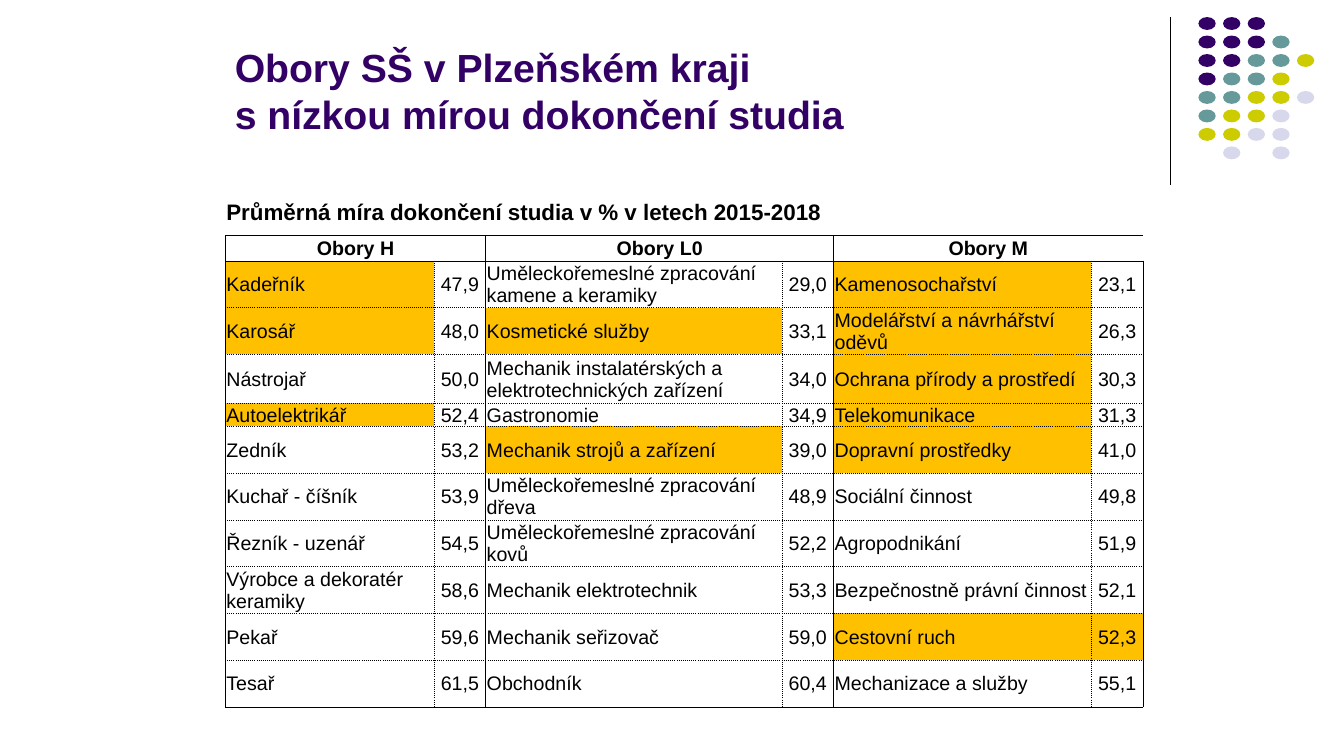
from lxml import etree
from pptx import Presentation
from pptx.dml.color import RGBColor
from pptx.enum.shapes import MSO_CONNECTOR, MSO_SHAPE
from pptx.enum.text import MSO_ANCHOR, MSO_AUTO_SIZE, PP_ALIGN
from pptx.oxml.ns import qn
from pptx.util import Pt

LEFT, CENTER = PP_ALIGN.LEFT, PP_ALIGN.CENTER
MIDDLE, BOTTOM = MSO_ANCHOR.MIDDLE, MSO_ANCHOR.BOTTOM
ELLIPSE, STRAIGHT = MSO_SHAPE.OVAL, MSO_CONNECTOR.STRAIGHT
NO_AUTOFIT = MSO_AUTO_SIZE.NONE

FONT = "Arial"
COLORS = {
    "black": "000000",
    "purple": "330066",
    "teal": "669999",
    "lime": "CCCC00",
    "lavender": "D8D8EC",
    "highlight": "FFC000",
}

# One letter per dot: the initial of its colour; a space leaves the place empty
DOT_ROWS = ["ppp", "pppt", "ppttl", "pttl", "ttllv", "tllv", "llvv", " v v"]
DOT_COLORS = {"p": "purple", "t": "teal", "l": "lime", "v": "lavender"}

CAPTION = "Průměrná míra dokončení studia v % v letech 2015-2018"
GROUPS = ["Obory H", "Obory L0", "Obory M"]
FIELDS = [
    ("Kadeřník", "47,9", "Uměleckořemeslné zpracování kamene a keramiky", "29,0",
     "Kamenosochařství", "23,1"),
    ("Karosář", "48,0", "Kosmetické služby", "33,1",
     "Modelářství a návrhářství oděvů", "26,3"),
    ("Nástrojař", "50,0", "Mechanik instalatérských a elektrotechnických zařízení", "34,0",
     "Ochrana přírody a prostředí", "30,3"),
    ("Autoelektrikář", "52,4", "Gastronomie", "34,9", "Telekomunikace", "31,3"),
    ("Zedník", "53,2", "Mechanik strojů a zařízení", "39,0", "Dopravní prostředky", "41,0"),
    ("Kuchař - číšník", "53,9", "Uměleckořemeslné zpracování dřeva", "48,9",
     "Sociální činnost", "49,8"),
    ("Řezník - uzenář", "54,5", "Uměleckořemeslné zpracování kovů", "52,2",
     "Agropodnikání", "51,9"),
    ("Výrobce a dekoratér keramiky", "58,6", "Mechanik elektrotechnik", "53,3",
     "Bezpečnostně právní činnost", "52,1"),
    ("Pekař", "59,6", "Mechanik seřizovač", "59,0", "Cestovní ruch", "52,3"),
    ("Tesař", "61,5", "Obchodník", "60,4", "Mechanizace a služby", "55,1"),
]
HIGHLIGHTED = {
    "Kadeřník", "Karosář", "Autoelektrikář", "Kosmetické služby",
    "Mechanik strojů a zařízení", "Kamenosochařství", "Modelářství a návrhářství oděvů",
    "Ochrana přírody a prostředí", "Telekomunikace", "Dopravní prostředky",
    "Cestovní ruch", "52,3",
}

COLUMN_WIDTHS = [149, 37, 211.5, 37, 184, 37]
ROW_HEIGHT = 33.4
SPECIAL_HEIGHTS = {1: 18, 4: 35, 5: 14}


def color(name):
    return RGBColor.from_string(COLORS[name])


def write_text(frame, text, *, size, bold=False, tint="black", align=LEFT):
    para = frame.paragraphs[0]
    para.text = text
    para.alignment = align
    for span in para.runs:
        span.font.name = FONT
        span.font.size = Pt(size)
        span.font.bold = bold
        span.font.color.rgb = color(tint)


def add_title(page, text):
    title = page.shapes.title
    title.left, title.top, title.width, title.height = Pt(160.5), Pt(0), Pt(594), Pt(102)
    frame = title.text_frame
    frame.auto_size = NO_AUTOFIT
    frame.vertical_anchor = BOTTOM
    write_text(frame, text, size=28, bold=True, tint="purple")


def add_divider(page):
    line = page.shapes.add_connector(STRAIGHT, Pt(836), Pt(12), Pt(836), Pt(132))
    line.line.color.rgb = color("black")
    line.line.width = Pt(0.75)
    etree.SubElement(line.element.spPr, qn("a:effectLst"))


def add_dots(page):
    for row, letters in enumerate(DOT_ROWS):
        for column, letter in enumerate(letters):
            if letter == " ":
                continue
            dot = page.shapes.add_shape(
                ELLIPSE, Pt(856 + 17.6 * column), Pt(12.2 + 13.2 * row), Pt(12.4), Pt(9.2))
            dot.shadow.inherit = False
            dot.fill.solid()
            dot.fill.fore_color.rgb = color(DOT_COLORS[letter])
            dot.line.fill.background()


def border_styles(row, column):
    """Return the left, right, top and bottom line style of a cell."""
    is_name = column % 2 == 0
    if row == 0:
        return None, None, None, "solid"
    if row == 1:
        return ("solid" if is_name else None, None if is_name else "solid",
                "solid", "solid")
    return ("solid" if is_name else "sysDot",
            "sysDot" if is_name else "solid",
            "solid" if row == 2 else "sysDot",
            "solid" if row == len(FIELDS) + 1 else "sysDot")


def set_borders(cell, styles):
    properties = cell._tc.get_or_add_tcPr()
    for index, (side, style) in enumerate(zip("LRTB", styles)):
        line = etree.Element(qn(f"a:ln{side}"), w=str(Pt(0.5)))
        if style:
            fill = etree.SubElement(line, qn("a:solidFill"))
            etree.SubElement(fill, qn("a:srgbClr"), val=COLORS["black"])
            etree.SubElement(line, qn("a:prstDash"), val=style)
        else:
            etree.SubElement(line, qn("a:noFill"))
        properties.insert(index, line)


def format_cell(cell, row, column, text):
    cell.margin_left = cell.margin_right = cell.margin_top = Pt(0.7)
    cell.margin_bottom = Pt(0)
    cell.vertical_anchor = MIDDLE
    if text in HIGHLIGHTED:
        cell.fill.solid()
        cell.fill.fore_color.rgb = color("highlight")
    else:
        cell.fill.background()
    set_borders(cell, border_styles(row, column))
    centered = row == 1 or (row > 1 and column % 2 == 1)
    write_text(cell.text_frame, text, size=16 if row == 0 else 14, bold=row < 2,
               align=CENTER if centered else LEFT)


def add_completion_table(page):
    headings = [text for group in GROUPS for text in (group, "")]
    rows = [[CAPTION] + [""] * 5, headings, *FIELDS]
    heights = [SPECIAL_HEIGHTS.get(row, ROW_HEIGHT) for row in range(len(rows))]
    frame = page.shapes.add_table(len(rows), len(COLUMN_WIDTHS), Pt(161), Pt(135),
                                  Pt(sum(COLUMN_WIDTHS)), Pt(sum(heights)))
    table = frame.table
    table.first_row = table.horz_banding = False
    for column, width in zip(table.columns, COLUMN_WIDTHS):
        column.width = Pt(width)
    for row, height in zip(table.rows, heights):
        row.height = Pt(height)
    for row, texts in enumerate(rows):
        for column, text in enumerate(texts):
            format_cell(table.cell(row, column), row, column, text)

    # Caption across the table, one heading over each name and rate pair
    table.cell(0, 0).merge(table.cell(0, 5))
    for column in range(0, 6, 2):
        table.cell(1, column).merge(table.cell(1, column + 1))


def main():
    deck = Presentation()
    deck.slide_width, deck.slide_height = Pt(960), Pt(540)
    page = deck.slides.add_slide(deck.slide_layouts[5])

    # Decoration in the top right corner
    add_divider(page)
    add_dots(page)

    # Content
    add_title(page, "Obory SŠ v Plzeňském kraji \vs nízkou mírou dokončení studia")
    add_completion_table(page)
    deck.save("out.pptx")


if __name__ == "__main__":
    main()
